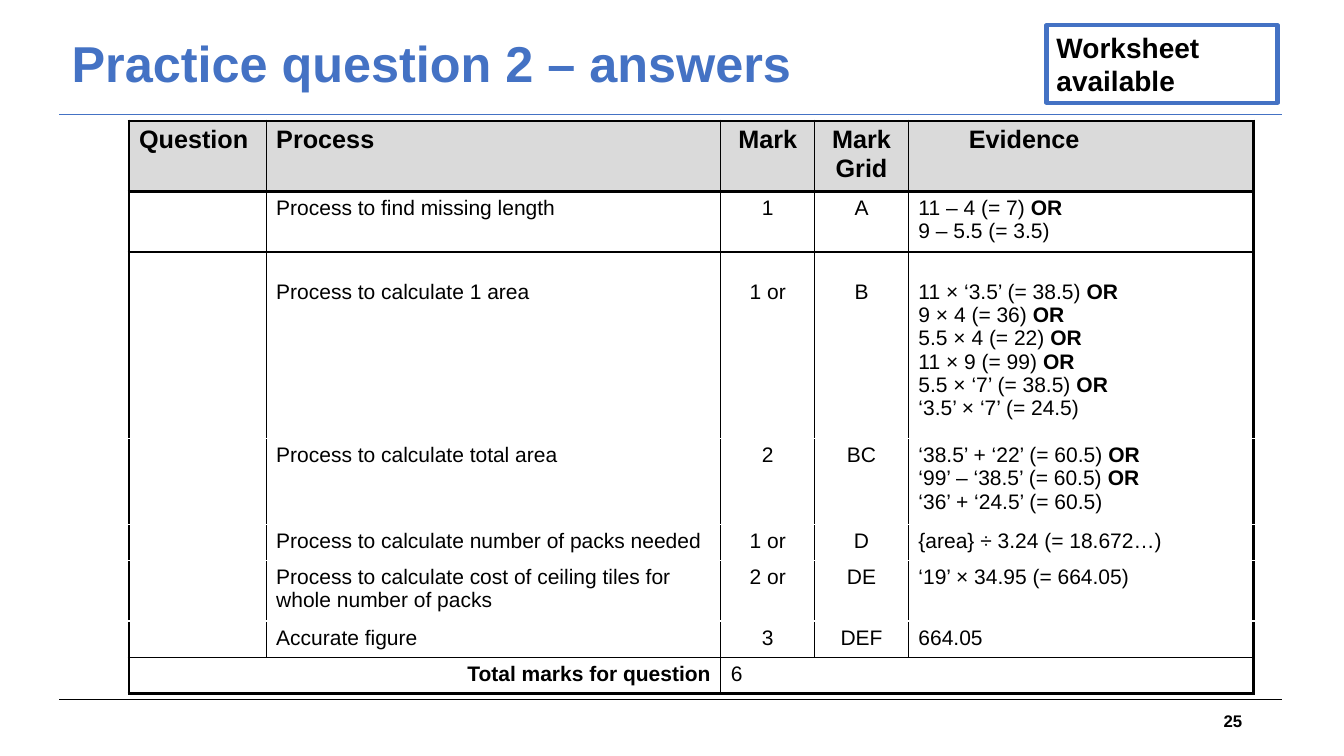
from dataclasses import dataclass
from typing import Any

from lxml import etree
from pptx import Presentation, util as u
from pptx.dml.color import RGBColor
from pptx.enum import shapes, text
from pptx.oxml import ns

BLUE, BLACK, WHITE, GREY = "4472C4", "000000", "FFFFFF", "DADADA"
LEFT, MID, RIGHT = text.PP_ALIGN.LEFT, text.PP_ALIGN.CENTER, text.PP_ALIGN.RIGHT
BOLD_TAIL = " OR"


@dataclass
class Look:
    size: float
    bold: bool = False
    hue: str = BLACK
    align: Any = LEFT
    space: float = 1.0


@dataclass
class Rule:
    y: float
    hue: str


@dataclass
class Edge:
    side: str
    hue: str
    width: float


@dataclass
class Row:
    high: float
    cells: tuple[str, ...]
    pad: float = 0.05


COLS = (1.36, 4.51, 0.93, 0.93, 3.42)
ALIGNS = (LEFT, LEFT, MID, MID, LEFT)
ROWS = (
    Row(0.7, ("Question", "Process", "Mark", "Mark Grid", "Evidence")),
    Row(0.6, ("", "Process to find missing length", "1", "A",
              "11 – 4 (= 7) OR\n9 – 5.5 (= 3.5)")),
    Row(1.85, ("", "Process to calculate 1 area", "1 or", "B",
               "11 × ‘3.5’ (= 38.5) OR\n9 × 4 (= 36) OR\n5.5 × 4 (= 22) OR\n"
               "11 × 9 (= 99) OR\n5.5 × ‘7’ (= 38.5) OR\n‘3.5’ × ‘7’ (= 24.5)"), 0.28),
    Row(0.85, ("", "Process to calculate total area", "2", "BC",
               "‘38.5’ + ‘22’ (= 60.5) OR\n‘99’ – ‘38.5’ (= 60.5) OR\n"
               "‘36’ + ‘24.5’ (= 60.5)")),
    Row(0.36, ("", "Process to calculate number of packs needed", "1 or", "D",
               "{area} ÷ 3.24 (= 18.672…)")),
    Row(0.6, ("", "Process to calculate cost of ceiling tiles for whole number of packs",
              "2 or", "DE", "‘19’ × 34.95 (= 664.05)")),
    Row(0.36, ("", "Accurate figure", "3", "DEF", "664.05")),
    Row(0.36, ("Total marks for question", "", "6", "", "")),
)
LAST = len(ROWS) - 1
RULES = (Rule(6.94, BLACK), Rule(1.14, BLUE))


def paint(part: Any, hue: str) -> None:
    part.rgb = RGBColor.from_string(hue)


def apply(item: Any, form: dict[str, Any]) -> None:
    for name, value in form.items():
        setattr(item, name, value)


def write(frame: Any, words: str, look: Look) -> None:
    for n, line in enumerate(words.split("\n")):
        para = frame.add_paragraph() if n else frame.paragraphs[0]
        apply(para, {"alignment": look.align, "line_spacing": look.space})
        body = line.removesuffix(BOLD_TAIL)
        para.text = body if body == line else body + " "
        if body != line:
            para.add_run().text = BOLD_TAIL.strip()
        for k, run in enumerate(para.runs):
            bold = look.bold or (k > 0 and body != line)
            apply(run.font, {"name": "Arial", "size": u.Pt(look.size), "bold": bold})
            paint(run.font.color, look.hue)
        apply(para.font, {"name": "Arial", "size": u.Pt(look.size)})


def place(item: Any, x: float, y: float, wide: float, high: float) -> None:
    apply(item, {"left": u.Inches(x), "top": u.Inches(y),
                 "width": u.Inches(wide), "height": u.Inches(high)})


def border(cell: Any, edge: Edge) -> None:
    props = cell._tc.get_or_add_tcPr()
    line = etree.SubElement(props, ns.qn(f"a:ln{edge.side}"), w=str(u.Pt(edge.width)))
    if not edge.width:
        etree.SubElement(line, ns.qn("a:noFill"))
        return
    fill = etree.SubElement(line, ns.qn("a:solidFill"))
    etree.SubElement(fill, ns.qn("a:srgbClr"), val=edge.hue)


def level(r: int, side: str) -> Edge:
    gap = r if side == "T" else r + 1
    if gap in (0, 1, LAST + 1):
        return Edge(side, BLACK, 2.25)
    return Edge(side, BLACK if gap in (2, LAST) else WHITE, 1)


def upright(r: int, c: int, side: str) -> Edge:
    gap = c if side == "L" else c + 1
    if gap in (0, len(COLS)):
        return Edge(side, BLACK, 2.25)
    if r == LAST:
        return Edge(side, BLACK, 1 if gap == 2 else 0)
    return Edge(side, BLACK, 0.75)


def add_rule(slide: Any, rule: Rule) -> None:
    y = u.Inches(rule.y)
    line = slide.shapes.add_connector(
        shapes.MSO_CONNECTOR.STRAIGHT, u.Inches(0.59), y, u.Inches(12.72), y)
    line.line.width = u.Pt(0.75)
    paint(line.line.color, rule.hue)
    etree.SubElement(line._element.spPr, ns.qn("a:effectLst"))


def add_grid(slide: Any) -> None:
    frame = slide.shapes.add_table(len(ROWS), len(COLS), 0, 0, 0, 0)
    place(frame, 1.28, 1.2, sum(COLS), sum(row.high for row in ROWS))
    grid = frame.table
    apply(grid, {"first_row": False, "horz_banding": False})
    for col, wide in zip(grid.columns, COLS):
        col.width = u.Inches(wide)
    for r, row in enumerate(ROWS):
        grid.rows[r].height = u.Inches(row.high)
        for c, words in enumerate(row.cells):
            cell = grid.cell(r, c)
            head = r == 0
            indent = 0.6 if head and c == len(COLS) - 1 else 0.1
            apply(cell, {"margin_left": u.Inches(indent), "margin_top": u.Inches(row.pad)})
            for edge in (upright(r, c, "L"), upright(r, c, "R"),
                         level(r, "T"), level(r, "B")):
                border(cell, edge)
            if head:
                cell.fill.solid()
                paint(cell.fill.fore_color, GREY)
            else:
                cell.fill.background()
            total = r == LAST
            align = (RIGHT if c == 0 else LEFT) if total else ALIGNS[c]
            bold = head or (total and c == 0)
            write(cell.text_frame, words, Look(18 if head else 15, bold, align=align))
    grid.cell(LAST, 0).merge(grid.cell(LAST, 1))


def add_badge(slide: Any) -> None:
    badge = slide.shapes.add_shape(shapes.MSO_SHAPE.RECTANGLE, 0, 0, 0, 0)
    place(badge, 10.38, 0.25, 2.29, 0.77)
    badge.shadow.inherit = False
    badge.fill.background()
    badge.line.width = u.Pt(3)
    paint(badge.line.color, BLUE)
    apply(badge.text_frame, {"word_wrap": True, "vertical_anchor": text.MSO_ANCHOR.TOP})
    write(badge.text_frame, "Worksheet\vavailable", Look(20, True))


def main() -> None:
    deck = Presentation()
    apply(deck, {"slide_width": u.Inches(13.33), "slide_height": u.Inches(7.5)})
    slide = deck.slides.add_slide(deck.slide_layouts[5])
    for rule in RULES:
        add_rule(slide, rule)
    title = slide.shapes.title
    place(title, 0.61, 0.1, 8.69, 1.11)
    title.text_frame.vertical_anchor = text.MSO_ANCHOR.MIDDLE
    write(title.text_frame, "Practice question 2 – answers", Look(36, True, BLUE, space=0.9))
    page = slide.shapes.add_textbox(0, 0, 0, 0)
    place(page, 9.42, 6.95, 3, 0.4)
    apply(page.text_frame, {"word_wrap": True, "vertical_anchor": text.MSO_ANCHOR.MIDDLE})
    write(page.text_frame, "25", Look(12, True, align=RIGHT))
    add_badge(slide)
    add_grid(slide)
    deck.save("out.pptx")


if __name__ == "__main__":
    main()
